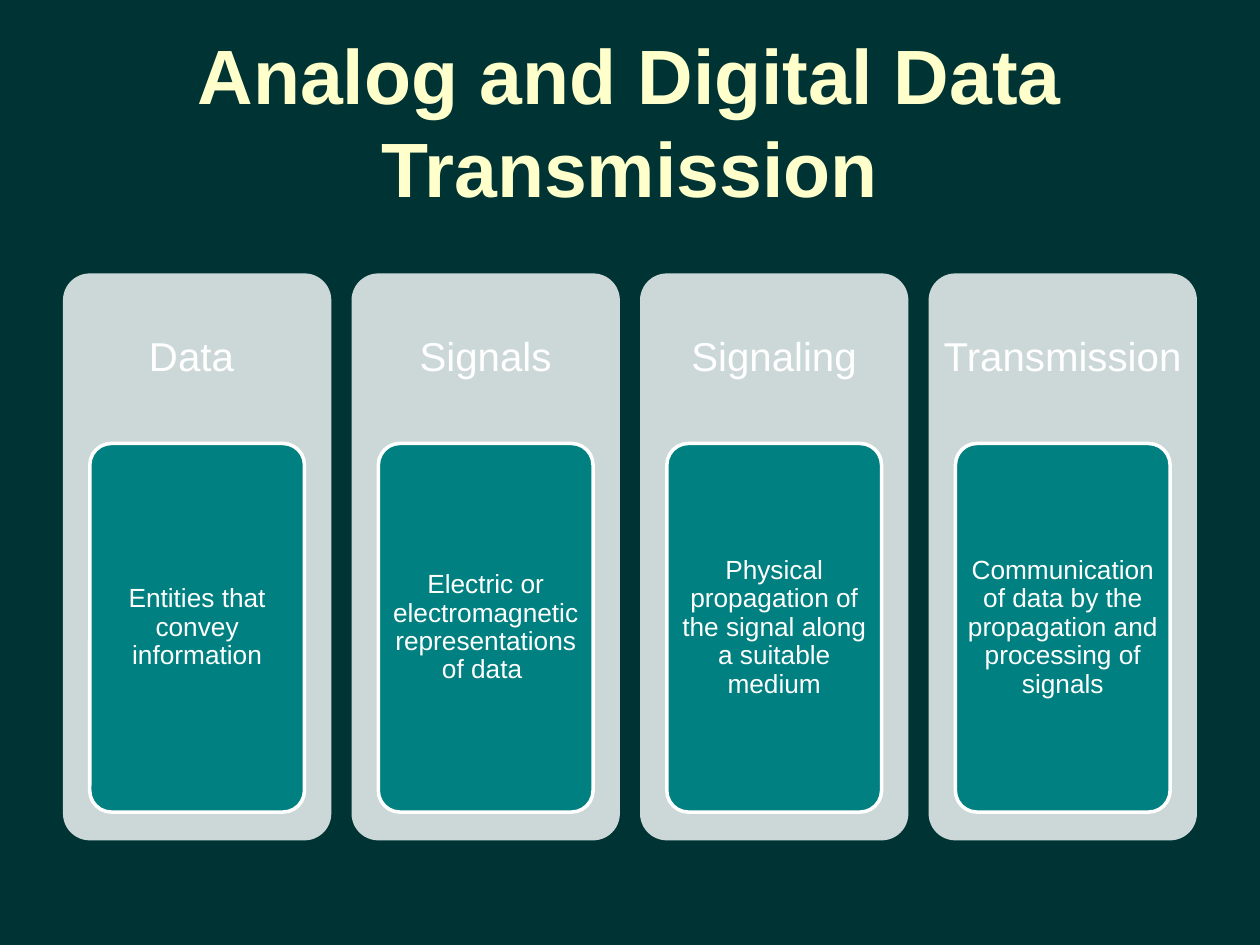
from dataclasses import dataclass

from pptx import Presentation
from pptx.dml.color import RGBColor
from pptx.enum import shapes, text
from pptx.util import Inches, Pt

WIDE, HIGH = 10, 7.5
COLS = 4
LEFT, TOP = 0.05 * WIDE, 2.17
SPAN, TALL = 0.9 * WIDE, 0.6 * HIGH
CARD = 2.13
STEP = (SPAN - CARD) / (COLS - 1)
HEAD = 0.3 * TALL      # heading band of a card
SIDE = 0.1 * CARD      # margin beside a panel
BODY = 0.65 * TALL     # panel height
PAD = 0.05             # panel edge to its text


@dataclass
class Box:
    x: float
    y: float
    w: float
    h: float

    def place(self) -> list:
        return [Inches(v) for v in (self.x, self.y, self.w, self.h)]

    def inner(self, pad: float) -> "Box":
        return Box(self.x + pad, self.y + pad, self.w - 2 * pad, self.h - 2 * pad)


@dataclass
class Term:
    name: str
    note: str


TERMS = [
    Term("Data ", "Entities that convey information"),
    Term("Signals", "Electric or electromagnetic representations of data "),
    Term("Signaling", "Physical propagation of the signal along a suitable medium"),
    Term("Transmission",
         "Communication of data by the propagation and processing of signals"),
]


def tint(code: str) -> RGBColor:
    return RGBColor.from_string(code)


def write(shape, words: str, size: float, code: str, bold: bool = False,
          gap: tuple = (0.1, 0.05), lead: float = 1.0) -> None:
    """Put one centred paragraph in a shape."""
    frame = shape.text_frame
    form = {"word_wrap": True, "auto_size": text.MSO_AUTO_SIZE.NONE,
            "vertical_anchor": text.MSO_ANCHOR.MIDDLE,
            "margin_left": Inches(gap[0]), "margin_right": Inches(gap[0]),
            "margin_top": Inches(gap[1]), "margin_bottom": Inches(gap[1])}
    for key, val in form.items():
        setattr(frame, key, val)
    para = frame.paragraphs[0]
    para.alignment, para.line_spacing = text.PP_ALIGN.CENTER, lead
    run = para.add_run()
    run.text = words
    for key, val in {"name": "Arial", "size": Pt(size), "bold": bold}.items():
        setattr(run.font, key, val)
    run.font.color.rgb = tint(code)


def plate(group, box: Box, fill: str, line: str = "") -> None:
    """Draw a rounded rectangle, outlined if a line colour is given."""
    shape = group.shapes.add_shape(
        shapes.MSO_SHAPE.ROUNDED_RECTANGLE, *box.place())
    shape.adjustments[0] = 0.1
    shape.shadow.inherit = False
    shape.fill.solid()
    shape.fill.fore_color.rgb = tint(fill)
    if line:
        shape.line.color.rgb = tint(line)
        shape.line.width = Pt(2)
    else:
        shape.line.fill.background()


def column(group, term: Term, x: float) -> None:
    """Draw a card with its heading, panel and note."""
    plate(group, Box(x, TOP, CARD, TALL), "CCD8D8")
    head = group.shapes.add_textbox(*Box(x, TOP, CARD, HEAD).place())
    write(head, term.name, 23, "FFFFFF", gap=(0.1, 0.1), lead=0.9)
    panel = Box(x + SIDE, TOP + HEAD, CARD - 2 * SIDE, BODY)
    plate(group, panel, "008080", "FFFFFF")
    note = group.shapes.add_textbox(*panel.inner(PAD).place())
    write(note, term.note, 15, "FFFFFF", gap=(0.04, 0.03), lead=0.9)


def main() -> None:
    deck = Presentation()
    deck.slide_width, deck.slide_height = Inches(WIDE), Inches(HIGH)
    slide = deck.slides.add_slide(deck.slide_layouts[5])
    slide.background.fill.solid()
    slide.background.fill.fore_color.rgb = tint("003333")

    # Title
    title = slide.shapes.title
    spot = Box(LEFT, 0.33, SPAN, 1.25).place()
    for key, val in zip(("left", "top", "width", "height"), spot):
        setattr(title, key, val)
    write(title, "Analog and Digital Data Transmission", 44, "FFFFCC", bold=True)

    # Four term cards
    group = slide.shapes.add_group_shape()
    for i, term in enumerate(TERMS):
        column(group, term, LEFT + i * STEP)

    deck.save("out.pptx")


if __name__ == "__main__":
    main()
